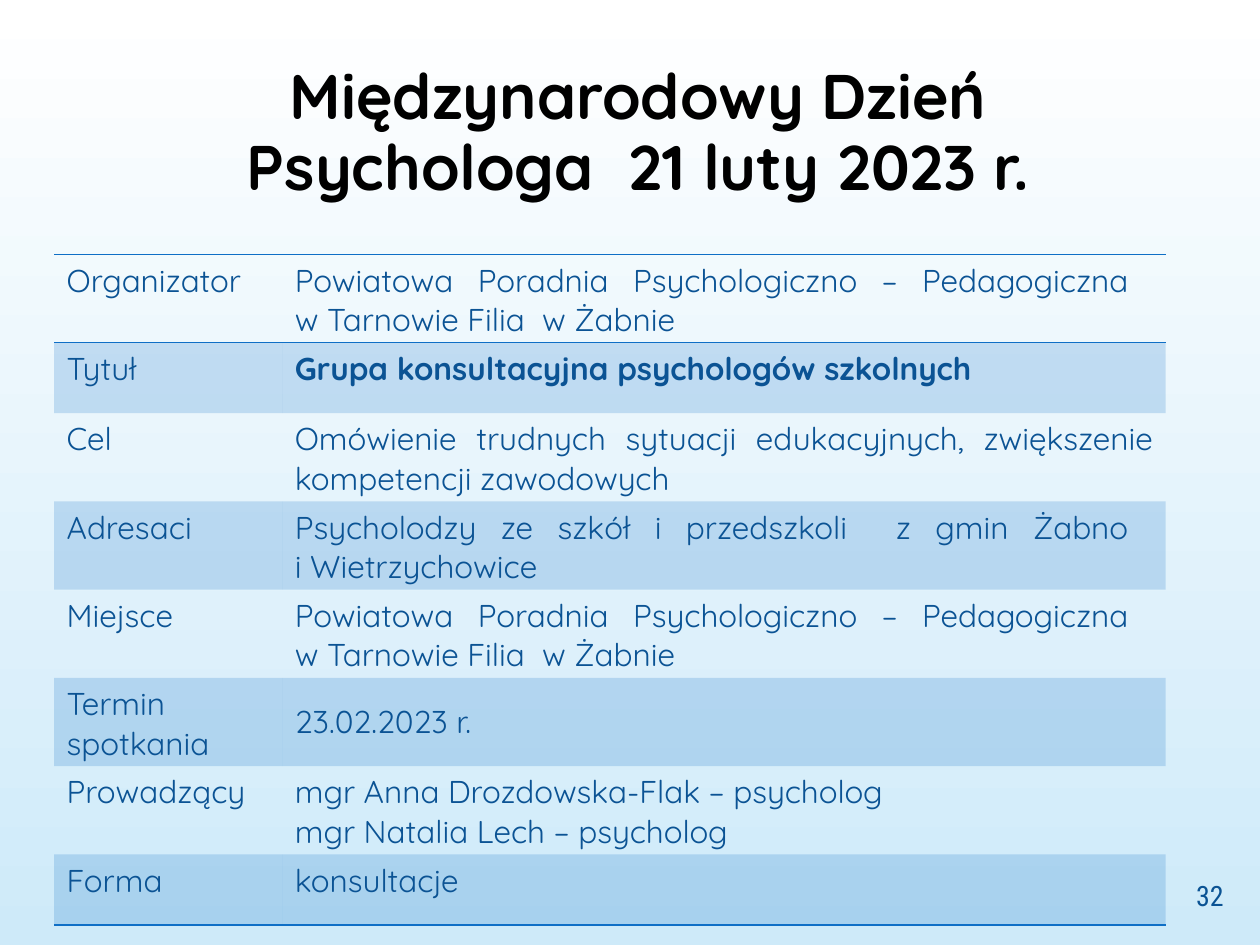
"""Build the slide announcing the psychologists' consultation group."""
from lxml import etree
from pptx import Presentation
from pptx.dml.color import RGBColor
from pptx.enum import text
from pptx.oxml import ns
from pptx.util import Cm, Pt

BLACK = RGBColor(0x00, 0x00, 0x00)
WHITE = RGBColor(0xFF, 0xFF, 0xFF)
SKY = RGBColor(0xCE, 0xEA, 0xF9)
NAVY = RGBColor(0x0B, 0x53, 0x94)
BLUE = RGBColor(0x0F, 0x6F, 0xC6)
NO_GRID = "{2D5ABB26-0587-4C30-8999-92F81FD0307C}"
CLINIC = "Powiatowa Poradnia Psychologiczno – Pedagogiczna \vw Tarnowie Filia  w Żabnie "
DETAILS = [
    ("Organizator", CLINIC, 1.68),
    ("Tytuł", "Grupa konsultacyjna psychologów szkolnych", 1.42),
    ("Cel", "Omówienie trudnych sytuacji edukacyjnych, zwiększenie kompetencji zawodowych", 1.68),
    ("Adresaci", "Psycholodzy ze szkół i przedszkoli  z gmin Żabno \vi Wietrzychowice", 1.68),
    ("Miejsce", CLINIC, 1.68),
    ("Termin spotkania", "23.02.2023 r.", 1.42),
    ("Prowadzący", "mgr Anna Drozdowska-Flak – psycholog\nmgr Natalia Lech – psycholog ", 1.68),
    ("Forma", "konsultacje", 1.42),
]


def write(frame, words, size, font, color, align, bold=False):
    frame.text = words
    for paragraph in frame.paragraphs:
        paragraph.alignment = align
        for run in paragraph.runs:
            run.font.size = Pt(size)
            run.font.name = font
            run.font.bold = bold
            run.font.color.rgb = color


def add_border(cell, side, position):
    line = etree.Element(ns.qn(f"a:{side}"), w=str(Pt(1)))
    solid = etree.SubElement(line, ns.qn("a:solidFill"))
    etree.SubElement(solid, ns.qn("a:srgbClr"), val=str(BLUE))
    cell._tc.get_or_add_tcPr().insert(position, line)


deck = Presentation()
deck.slide_width, deck.slide_height = Cm(25.4), Cm(19.05)
slide = deck.slides.add_slide(deck.slide_layouts[6])

backdrop = slide.background.fill
backdrop.gradient()
backdrop.gradient_angle = 270
for stop, color, place in zip(backdrop.gradient_stops, (WHITE, SKY), (0, 1)):
    stop.color.rgb = color
    stop.position = place

heading = slide.shapes.add_textbox(Cm(3.71), Cm(0.91), Cm(18.31), Cm(3.56)).text_frame
heading.word_wrap = True
heading.vertical_anchor = text.MSO_ANCHOR.MIDDLE
write(heading, "Międzynarodowy Dzień Psychologa  21 luty 2023 r.", 36, "Quicksand",
      BLACK, text.PP_ALIGN.CENTER, True)
heading.paragraphs[0].line_spacing = 0.95

details = slide.shapes.add_table(len(DETAILS), 2, Cm(1.09), Cm(5.13), Cm(22.41), Cm(12.66)).table
details.first_row = details.horz_banding = False
details._tbl.tblPr.find(ns.qn("a:tableStyleId")).text = NO_GRID
details.columns[0].width, details.columns[1].width = Cm(4.6), Cm(17.81)

last = len(DETAILS) - 1
for index, (label, content, height) in enumerate(DETAILS):
    details.rows[index].height = Cm(height)
    label_cell, content_cell = details.rows[index].cells
    write(label_cell.text_frame, label, 18, "Quicksand", NAVY, text.PP_ALIGN.LEFT)
    align = text.PP_ALIGN.LEFT if index == last else text.PP_ALIGN.JUSTIFY
    write(content_cell.text_frame, content, 18, "Quicksand", NAVY, align, label == "Tytuł")
    if label == "Termin spotkania":
        content_cell.vertical_anchor = text.MSO_ANCHOR.MIDDLE
    for cell in (label_cell, content_cell):
        if index % 2:
            cell.fill.solid()
            cell.fill.fore_color.rgb = BLUE
            tint = cell._tc.tcPr.find(".//" + ns.qn("a:srgbClr"))
            etree.SubElement(tint, ns.qn("a:alpha"), val="20000")
        else:
            cell.fill.background()
        if index in (0, last):
            add_border(cell, "lnB", 0)
        if index == 0:
            add_border(cell, "lnT", 0)

page_number = slide.shapes.add_textbox(Cm(23.29), Cm(17.53), Cm(1.63), Cm(1.02)).text_frame
page_number.word_wrap = True
page_number.vertical_anchor = text.MSO_ANCHOR.MIDDLE
write(page_number, "32", 16, "Roboto Condensed", NAVY, text.PP_ALIGN.RIGHT)

deck.save("out.pptx")
